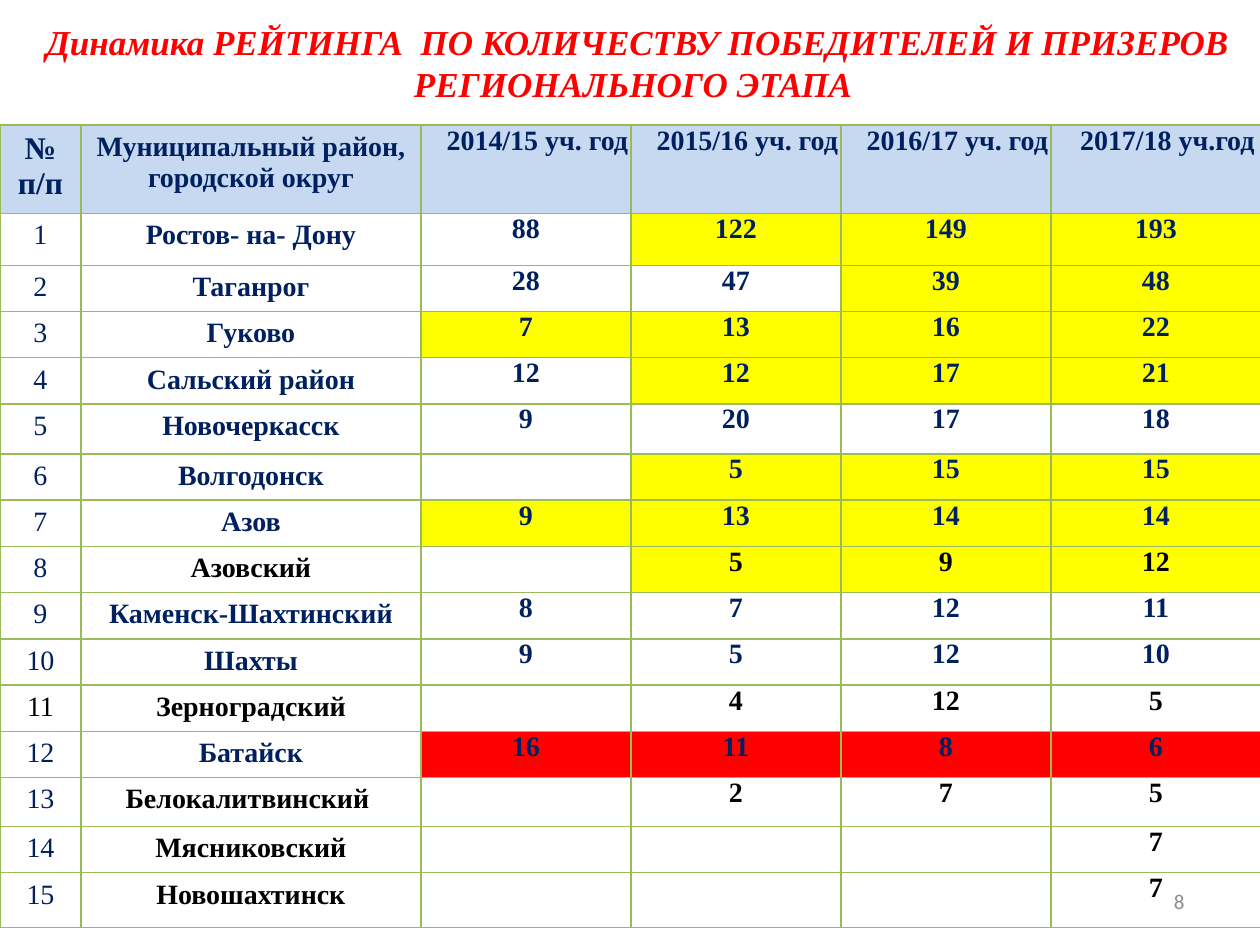
from lxml import etree
from pptx import Presentation
from pptx.dml.color import RGBColor
from pptx.enum.text import MSO_ANCHOR, PP_ALIGN
from pptx.oxml.ns import qn
from pptx.util import Pt

PX = 914400 // 126
MID, TOP = MSO_ANCHOR.MIDDLE, MSO_ANCHOR.TOP
CENTER, RIGHT = PP_ALIGN.CENTER, PP_ALIGN.RIGHT
SERIF, SANS = "Times New Roman", "Calibri"
INK = {"title": "FF0000", "navy": "002060", "black": "000000",
       "gray": "8C8C8C", "line": "9BBB59"}
FILL = {"head": "C6D9F1", "w": "FFFFFF", "y": "FFFF00", "r": "FF0000"}

COLS = [81, 340, 210, 210, 210, 210]
ROWS = [86, 52] + [45] * 3 + [50] + [45] * 7 + [49, 45, 55]
HEAD = ["№ п/п", "Муниципальный район, городской округ", "2014/15 уч. год",
        "2015/16 уч. год", "2016/17 уч. год", "2017/18 уч.год"]
# Name, values by year, cell fills by year, colours of number, name and values
NAVY = ("navy",) * 3
MIXED = ("navy", "black", "black")
DATA = [
    ("Ростов- на- Дону", (88, 122, 149, 193), "wyyy", NAVY),
    ("Таганрог", (28, 47, 39, 48), "wwyy", NAVY),
    ("Гуково", (7, 13, 16, 22), "yyyy", NAVY),
    ("Сальский район", (12, 12, 17, 21), "wyyy", NAVY),
    ("Новочеркасск", (9, 20, 17, 18), "wwww", NAVY),
    ("Волгодонск", ("", 5, 15, 15), "wyyy", NAVY),
    ("Азов", (9, 13, 14, 14), "yyyy", NAVY),
    ("Азовский", ("", 5, 9, 12), "wyyy", MIXED),
    ("Каменск-Шахтинский", (8, 7, 12, 11), "wwww", NAVY),
    ("Шахты", (9, 5, 12, 10), "wwww", NAVY),
    ("Зерноградский", ("", 4, 12, 5), "wwww", ("black",) * 3),
    ("Батайск", (16, 11, 8, 6), "rrrr", NAVY),
    ("Белокалитвинский ", ("", 2, 7, 5), "wwww", MIXED),
    ("Мясниковский", ("", "", "", 7), "wwww", MIXED),
    ("Новошахтинск", ("", "", "", 7), "wwww", MIXED),
]


def rgb(code):
    return RGBColor.from_string(code)


def write(frame, text, size, ink, font=SERIF, align=CENTER, bold=False, slant=False):
    para = frame.paragraphs[0]
    para.alignment = align
    if text != "":
        run = para.add_run()
        run.text = str(text)
        run.font.name = font
        run.font.size = Pt(size)
        run.font.bold = bold
        run.font.italic = slant
        run.font.color.rgb = rgb(INK[ink])
    return para


def text_box(slide, box, text, size, ink, **style):
    frame = slide.shapes.add_textbox(*(n * PX for n in box)).text_frame
    frame.word_wrap = True
    frame.vertical_anchor = MID
    write(frame, text, size, ink, **style)


def edge(cell):
    # Cell borders go ahead of the fill in the cell properties
    props = cell._tc.get_or_add_tcPr()
    for i, side in enumerate(("lnL", "lnR", "lnT", "lnB")):
        line = etree.Element(qn("a:" + side), w=str(Pt(1)))
        solid = etree.SubElement(line, qn("a:solidFill"))
        etree.SubElement(solid, qn("a:srgbClr"), val=INK["line"])
        props.insert(i, line)


def put(cell, text, fill, size, ink, bold=True, tight=False):
    cell.fill.solid()
    cell.fill.fore_color.rgb = rgb(FILL[fill])
    cell.vertical_anchor = TOP
    if tight:
        cell.margin_left = cell.margin_right = 0
        cell.margin_top = cell.margin_bottom = 0
    edge(cell)
    return write(cell.text_frame, text, size, ink, bold=bold)


def rating(slide, box):
    grid = slide.shapes.add_table(len(ROWS), len(COLS), *(n * PX for n in box)).table
    grid.first_row = grid.horz_banding = False
    for col, wide in zip(grid.columns, COLS):
        col.width = wide * PX
    for row, high in zip(grid.rows, ROWS):
        row.height = high * PX

    # Header row, with indented years
    for c, text in enumerate(HEAD):
        para = put(grid.cell(0, c), text, "head", 16 if c else 18, "navy", tight=c > 1)
        if c > 1:
            para._p.get_or_add_pPr().set("marL", str(23 * PX))

    # One row for each district
    for r, (name, vals, fills, inks) in enumerate(DATA, 1):
        put(grid.cell(r, 0), r, "w", 16, inks[0], bold=False)
        put(grid.cell(r, 1), name, "w", 16, inks[1])
        for c, (val, fill) in enumerate(zip(vals, fills), 2):
            put(grid.cell(r, c), val, fill, 16, inks[2], tight=True)


def main():
    deck = Presentation()
    deck.slide_width, deck.slide_height = 1260 * PX, 945 * PX
    slide = deck.slides.add_slide(deck.slide_layouts[6])
    # Title
    text_box(slide, (0, 0, 1275, 126),
             "Динамика РЕЙТИНГА  ПО КОЛИЧЕСТВУ ПОБЕДИТЕЛЕЙ И ПРИЗЕРОВ "
             "РЕГИОНАЛЬНОГО ЭТАПА ", 20, "title", bold=True, slant=True)
    # Table
    rating(slide, (0, 125, sum(COLS), sum(ROWS)))
    # Page number
    text_box(slide, (903, 876, 294, 50), "8", 12, "gray", font=SANS, align=RIGHT)
    deck.save("out.pptx")


if __name__ == "__main__":
    main()
